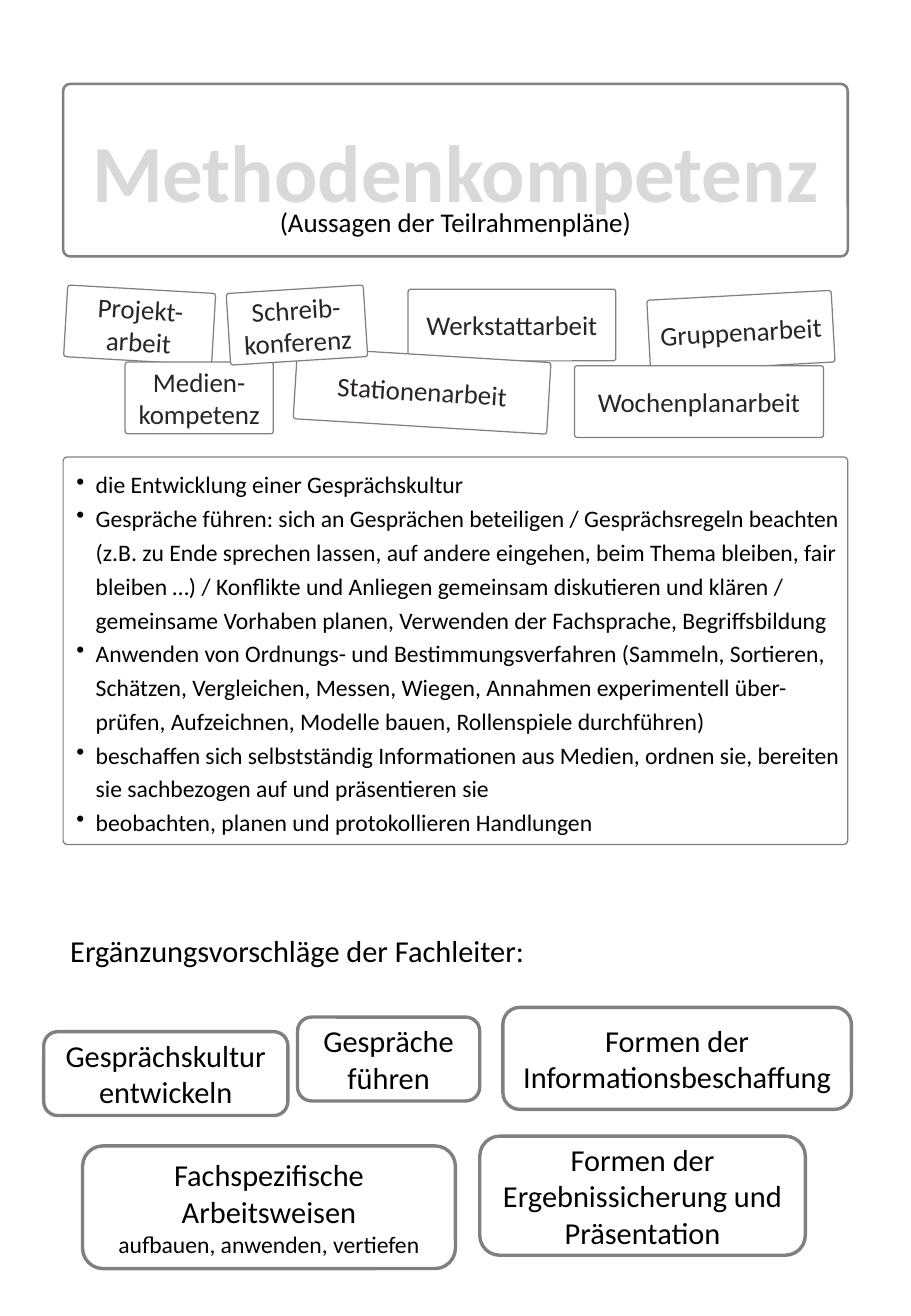
from lxml import etree
from pptx import Presentation
from pptx import util as u
from pptx.dml.color import RGBColor
from pptx.enum import shapes, text
from pptx.oxml.ns import qn

FONT = "Calibri"
BLACK, DARK, GREY, PALE, WHITE = "000000", "292526", "808080", "D9D9D9", "FFFFFF"
CENTER, LEFT = text.PP_ALIGN.CENTER, text.PP_ALIGN.LEFT

METHODS = [  # label, left, top, width, rotation
    ("Projekt-arbeit", 0.54, 2.38, 1.22, 3.3),
    ("Werkstattarbeit", 3.36, 2.38, 1.71, 0),
    ("Medien-kompetenz", 1.03, 2.98, 1.22, 0),
    ("Gruppenarbeit", 5.34, 2.43, 1.52, -3.1),
    ("Wochenplanarbeit", 4.73, 3.01, 2.05, 0),
    ("Stationenarbeit", 2.43, 2.92, 2.09, 3.5),
    ("Schreib-konferenz", 1.88, 2.38, 1.13, -3.6),
]
STATEMENTS = [
    "die Entwicklung einer Gesprächskultur",
    "Gespräche führen: sich an Gesprächen beteiligen / Gesprächsregeln beachten\v"
    "(z.B. zu Ende sprechen lassen, auf andere eingehen, beim Thema bleiben, fair\v"
    "bleiben …) / Konflikte und Anliegen gemeinsam diskutieren und klären /\v"
    "gemeinsame Vorhaben planen, Verwenden der Fachsprache, Begriffsbildung",
    "Anwenden von Ordnungs- und Bestimmungsverfahren (Sammeln, Sortieren,\v"
    "Schätzen, Vergleichen, Messen, Wiegen, Annahmen experimentell über-\v"
    "prüfen, Aufzeichnen, Modelle bauen, Rollenspiele durchführen)",
    "beschaffen sich selbstständig Informationen aus Medien, ordnen sie, bereiten\v"
    "sie sachbezogen auf und präsentieren sie",
    "beobachten, planen und protokollieren Handlungen",
]
SUGGESTIONS = [  # box, paragraphs
    ((0.36, 8.49, 2.01, 0.69), ["Gesprächskultur entwickeln"]),
    ((2.45, 8.37, 1.5, 0.69), ["Gespräche führen"]),
    ((0.68, 9.43, 3.07, 1.01),
     ["Fachspezifische Arbeitsweisen", "aufbauen, anwenden, vertiefen"]),
    ((4.14, 8.29, 2.87, 0.84), ["Formen der Informationsbeschaffung"]),
    ((3.95, 9.35, 2.68, 0.98), ["Formen der Ergebnissicherung und Präsentation"]),
]


def color(value):
    return RGBColor.from_string(value)


def write(shape, paragraphs, size, font_color=BLACK, align=CENTER, bold=False):
    frame = shape.text_frame
    frame.word_wrap = True
    frame.text = "\n".join(paragraphs)
    for paragraph in frame.paragraphs:
        paragraph.alignment = align
        for run in paragraph.runs:
            font = run.font
            font.name, font.size, font.bold = FONT, u.Pt(size), bold
            font.color.rgb = color(font_color)


def add_card(slide, box, line_width, corner, fill=None):
    """Add a rounded box with a grey outline."""
    card = slide.shapes.add_shape(
        shapes.MSO_SHAPE.ROUNDED_RECTANGLE, *map(u.Inches, box))
    card.shadow.inherit = False
    card.adjustments[0] = corner
    card.line.color.rgb = color(GREY)
    card.line.width = u.Pt(line_width)
    if fill:
        card.fill.solid()
        card.fill.fore_color.rgb = color(fill)
    else:
        card.fill.background()
    card.text_frame.vertical_anchor = text.MSO_ANCHOR.MIDDLE
    return card


def set_insets(shape, left):
    frame = shape.text_frame
    frame.margin_left, frame.margin_right = u.Inches(left), u.Inches(0.04)


def add_label(slide, box, words, size, align):
    label = slide.shapes.add_textbox(*map(u.Inches, box))
    write(label, [words], size, align=align)


def add_bullet(paragraph, indent):
    properties = paragraph._p.get_or_add_pPr()
    properties.set("marL", str(u.Inches(indent)))
    properties.set("indent", str(-u.Inches(indent)))
    etree.SubElement(properties, qn("a:buChar"), char="•")


def add_header(slide, box):
    left, top, width, height = box
    card = add_card(slide, box, 1.5, 0.04)
    write(card, ["Methodenkompetenz"], 48, PALE, bold=True)
    add_label(slide, (left + 0.75, top + 0.95, width - 1.5, 0.37),
              "(Aussagen der Teilrahmenpläne)", 16, CENTER)


def add_methods(slide, height):
    for label, left, top, width, rotation in METHODS:
        card = add_card(slide, (left, top, width, height), 0.75, 0.037, WHITE)
        card.rotation = rotation
        set_insets(card, 0.04)
        write(card, [label], 16, DARK)


def add_statements(slide, box):
    card = add_card(slide, box, 0.75, 0.011)
    set_insets(card, 0.1)
    write(card, STATEMENTS, 14, align=LEFT)
    for paragraph in card.text_frame.paragraphs:
        paragraph.line_spacing = u.Pt(20)
        add_bullet(paragraph, 0.16)


def add_suggestions(slide, heading_box):
    add_label(slide, heading_box, "Ergänzungsvorschläge der Fachleiter:", 18, LEFT)
    for box, paragraphs in SUGGESTIONS:
        card = add_card(slide, box, 2, 0.167, WHITE)
        write(card, paragraphs, 18)
        for detail in card.text_frame.paragraphs[1:]:
            detail.runs[0].font.size = u.Pt(14)


def main():
    presentation = Presentation()
    presentation.slide_width = u.Inches(7.5)
    presentation.slide_height = u.Inches(10.83)
    slide = presentation.slides.add_slide(presentation.slide_layouts[6])
    add_header(slide, (0.52, 0.69, 6.46, 1.42))
    add_methods(slide, 0.59)
    add_statements(slide, (0.52, 3.76, 6.46, 3.19))
    add_suggestions(slide, (0.48, 7.62, 5.51, 0.4))
    presentation.save("out.pptx")


if __name__ == "__main__":
    main()
